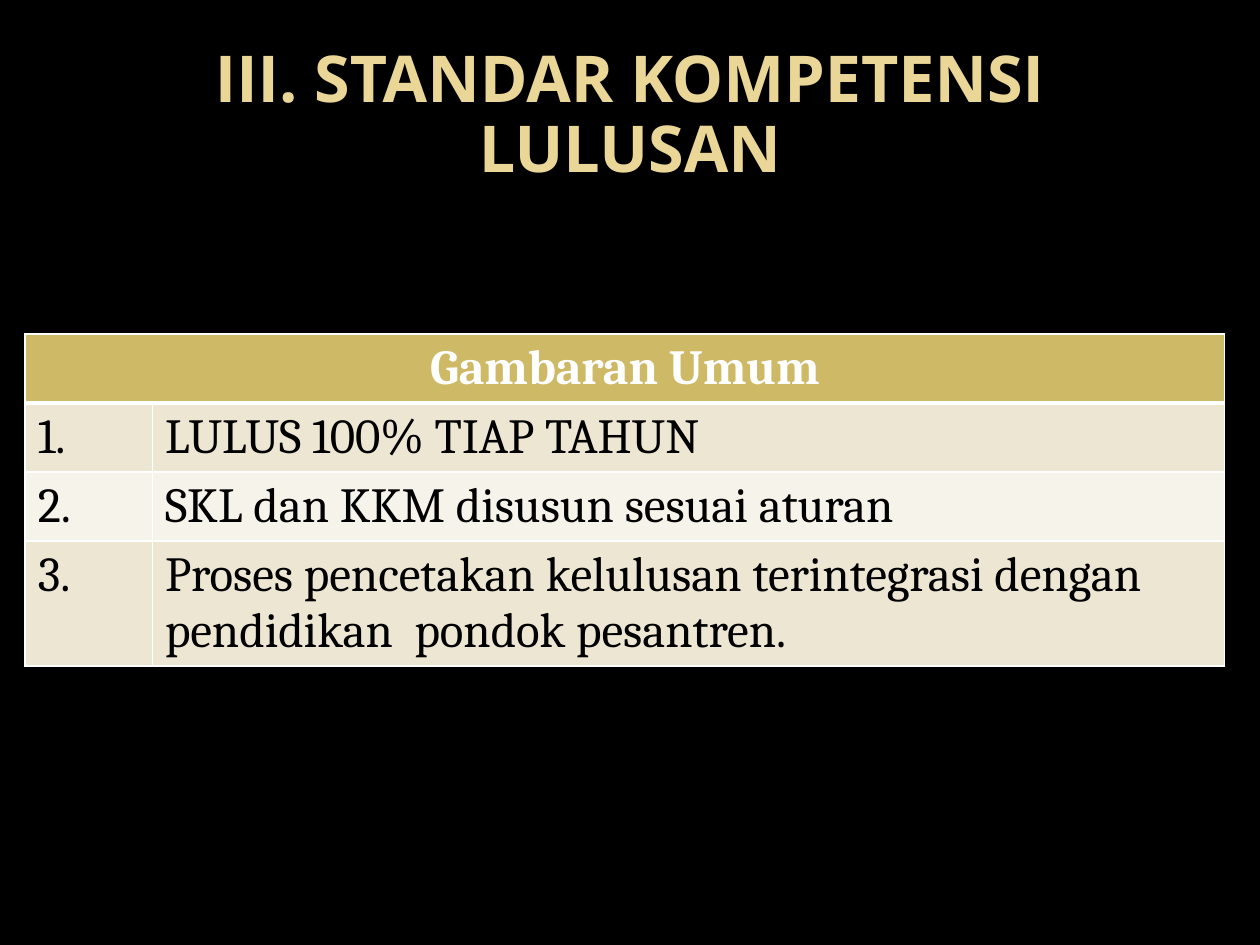
from dataclasses import dataclass

from lxml.etree import SubElement
from pptx import Presentation
from pptx.dml.color import RGBColor
from pptx.enum.text import MSO_ANCHOR as Anchor, MSO_AUTO_SIZE as AutoSize, PP_ALIGN as Align
from pptx.oxml.ns import qn
from pptx.slide import Slide
from pptx.table import _Cell as Cell
from pptx.text.text import TextFrame
from pptx.util import Inches, Pt


@dataclass(frozen=True)
class Theme:
    background: str = "000000"
    title: str = "EAD696"
    header: str = "CEB966"
    bands: tuple[str, str] = ("EDE6D3", "F6F3EA")
    light: str = "FFFFFF"
    dark: str = "000000"
    title_font: str = "Open Sans"
    body_font: str = "Cambria"
    title_size: float = 36.9
    body_size: float = 28
    thin: float = 1
    thick: float = 3


@dataclass(frozen=True)
class Standard:
    number: str
    text: str


THEME = Theme()
WIDTH, HEIGHT = Inches(10), Inches(7.5)
ROW_HEIGHT = Inches(0.41)
TITLE = "III. STANDAR KOMPETENSI LULUSAN"
HEADER = "Gambaran Umum"
STANDARDS = (
    Standard("1.", "LULUS 100% TIAP TAHUN"),
    Standard("2.", "SKL dan KKM disusun sesuai aturan"),
    Standard("3.", "Proses pencetakan kelulusan terintegrasi dengan pendidikan  pondok pesantren."),
)


def write(frame: TextFrame, text: str, *, color: str, font: str = THEME.body_font,
          size: float = THEME.body_size, bold: bool = False,
          align: Align = Align.LEFT, spacing: float = 1.0) -> None:
    para = frame.paragraphs[0]
    para.alignment = align
    para.line_spacing = spacing
    span = para.add_run()
    span.text = text
    span.font.name = font
    span.font.size = Pt(size)
    span.font.bold = bold
    span.font.color.rgb = RGBColor.from_string(color)


def paint(cell: Cell, fill: str, top: float = THEME.thin, bottom: float = THEME.thin) -> None:
    cell.fill.solid()
    cell.fill.fore_color.rgb = RGBColor.from_string(fill)
    properties = cell._tc.get_or_add_tcPr()
    widths = {"a:lnL": THEME.thin, "a:lnR": THEME.thin, "a:lnT": top, "a:lnB": bottom}
    for position, (side, width) in enumerate(widths.items()):
        line = SubElement(properties, qn(side), w=str(Pt(width)))
        SubElement(SubElement(line, qn("a:solidFill")), qn("a:srgbClr"), val=THEME.light)
        properties.insert(position, line)


def add_title(page: Slide) -> None:
    box = page.shapes.title
    box.left, box.top = int(WIDTH * 0.05), int(HEIGHT * 0.04)
    box.width, box.height = int(WIDTH * 0.9), Inches(1.25)
    frame = box.text_frame
    frame.word_wrap = True
    frame.auto_size = AutoSize.NONE
    frame.vertical_anchor = Anchor.MIDDLE
    write(frame, TITLE, color=THEME.title, font=THEME.title_font,
          size=THEME.title_size, bold=True, align=Align.CENTER, spacing=0.9)


def add_standards(page: Slide) -> None:
    rows = len(STANDARDS) + 1
    holder = page.shapes.add_table(rows, 2, Inches(0.2), Inches(2.65),
                                   Inches(9.52), ROW_HEIGHT * rows)
    table = holder.table
    table.horz_banding = False
    table.columns[0].width, table.columns[1].width = Inches(1.01), Inches(8.51)
    holder.height = Inches(2.73)

    header = table.cell(0, 0)
    for cell in table.rows[0].cells:
        paint(cell, THEME.header, bottom=THEME.thick)
    header.merge(table.cell(0, 1))
    header.vertical_anchor = Anchor.MIDDLE
    write(header.text_frame, HEADER, color=THEME.light, bold=True, align=Align.CENTER)

    for index, standard in enumerate(STANDARDS):
        top = THEME.thin if index else THEME.thick
        for column, text in enumerate((standard.number, standard.text)):
            cell = table.cell(index + 1, column)
            paint(cell, THEME.bands[index % 2], top=top)
            write(cell.text_frame, text, color=THEME.dark)


def main() -> None:
    deck = Presentation()
    deck.slide_width, deck.slide_height = WIDTH, HEIGHT
    page = deck.slides.add_slide(deck.slide_layouts.get_by_name("Title Only"))
    page.background.fill.solid()
    page.background.fill.fore_color.rgb = RGBColor.from_string(THEME.background)
    add_title(page)
    add_standards(page)
    deck.save("out.pptx")


if __name__ == "__main__":
    main()
